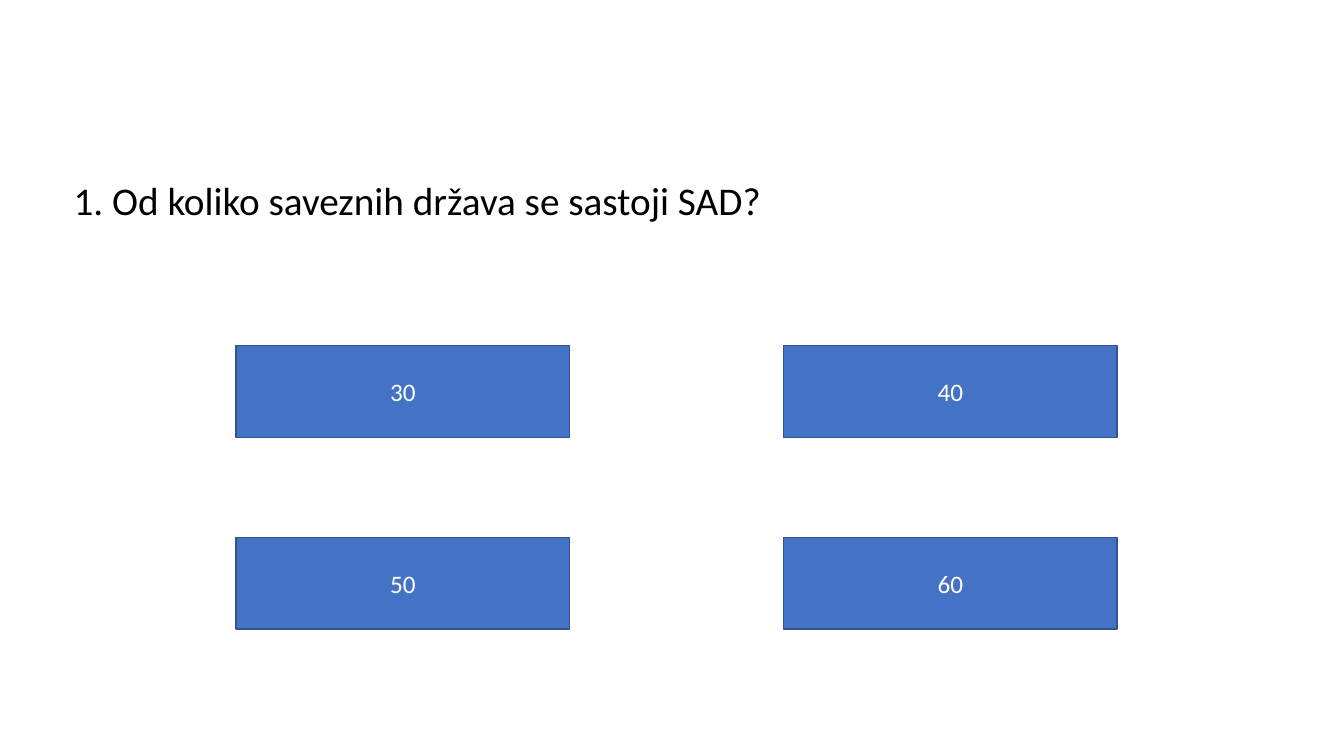
import dataclasses

import pptx
import pptx.dml.color
import pptx.enum.shapes
import pptx.enum.text
import pptx.util

Inches = pptx.util.Inches


@dataclasses.dataclass(frozen=True)
class Theme:
    font: str = "Calibri"
    ink: str = "000000"
    light: str = "FFFFFF"
    fill: str = "4472C4"
    edge: str = "325491"
    title: int = 28
    label: int = 18


THEME = Theme()


def paint(code):
    return pptx.dml.color.RGBColor.from_string(code)


def write(shape, text, size, color, align, anchor):
    frame = shape.text_frame
    frame.text = text
    frame.word_wrap = True
    frame.vertical_anchor = anchor
    line = frame.paragraphs[0]
    line.alignment = align
    font = line.runs[0].font
    font.name = THEME.font
    font.size = pptx.util.Pt(size)
    font.color.rgb = paint(color)


def add_title(slide, text):
    title = slide.shapes.title
    title.left, title.top = Inches(0.63), Inches(1.7)
    title.width, title.height = Inches(11.81), Inches(0.57)
    write(title, text, THEME.title, THEME.ink,
          pptx.enum.text.PP_ALIGN.LEFT, pptx.enum.text.MSO_ANCHOR.TOP)
    title.text_frame.auto_size = pptx.enum.text.MSO_AUTO_SIZE.SHAPE_TO_FIT_TEXT


def add_choice(slide, text, left, top):
    box = slide.shapes.add_shape(
        pptx.enum.shapes.MSO_SHAPE.RECTANGLE,
        Inches(left), Inches(top), Inches(3.31), Inches(0.91))
    box.shadow.inherit = False
    box.fill.solid()
    box.fill.fore_color.rgb = paint(THEME.fill)
    box.line.color.rgb = paint(THEME.edge)
    box.line.width = pptx.util.Pt(1)
    write(box, text, THEME.label, THEME.light,
          pptx.enum.text.PP_ALIGN.CENTER, pptx.enum.text.MSO_ANCHOR.MIDDLE)


def main():
    deck = pptx.Presentation()
    deck.slide_width, deck.slide_height = Inches(13.33), Inches(7.5)
    slide = deck.slides.add_slide(deck.slide_layouts.get_by_name("Title Only"))
    add_title(slide, "1. Od koliko saveznih država se sastoji SAD?")
    for place, text in enumerate(["30", "40", "50", "60"]):
        row, col = divmod(place, 2)
        add_choice(slide, text, 2.34 + 5.43 * col, 3.43 + 1.9 * row)
    deck.save("out.pptx")


if __name__ == "__main__":
    main()
